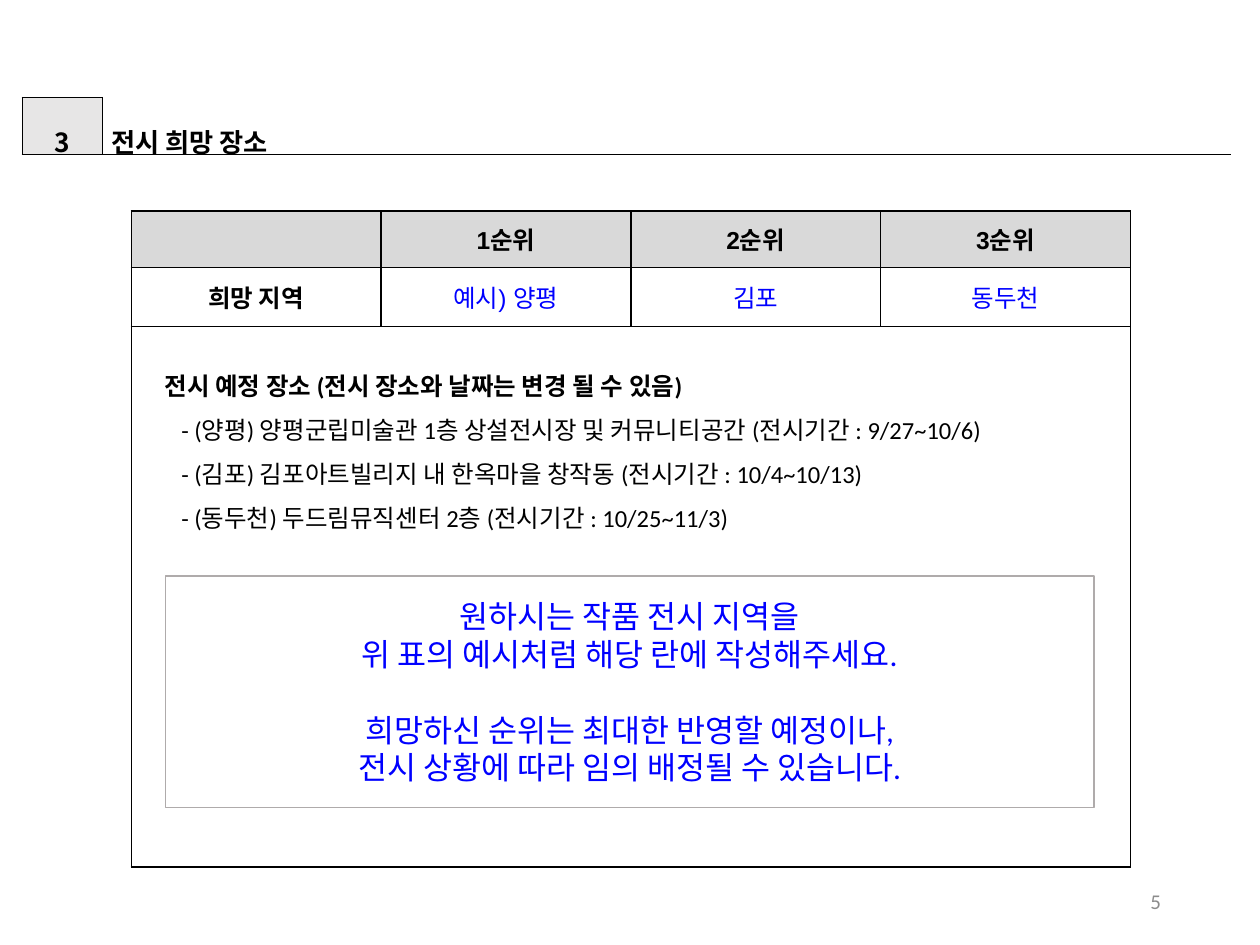
from dataclasses import dataclass

import pptx
import pptx.dml.color
import pptx.enum.shapes
import pptx.enum.text
import pptx.oxml
import pptx.oxml.ns
import pptx.util

Pt = pptx.util.Pt
RGB = pptx.dml.color.RGBColor.from_string
ALIGN = pptx.enum.text.PP_ALIGN
MIDDLE = pptx.enum.text.MSO_ANCHOR.MIDDLE
TOP = pptx.enum.text.MSO_ANCHOR.TOP


@dataclass(frozen=True)
class Theme:
    ink: str = "000000"
    example: str = "0000FF"
    page_number: str = "8C8C8C"
    head_fill: str = "D9D9D9"
    number_fill: str = "E7E6E6"
    paper: str = "FFFFFF"
    frame: str = "AFABAB"
    small: float = 12
    body: float = 14
    heading: float = 15
    notice: float = 18
    table_font: str = "Arial"
    text_font: str = "Calibri"
    korean_font: str = "Noto Sans CJK KR"


THEME = Theme()


def set_attributes(target, values):
    for name, value in values.items():
        setattr(target, name, value)


def write(para, words, size, font, color=THEME.ink, bold=False, **layout):
    set_attributes(para, layout)
    span = para.add_run()
    span.text = words
    set_attributes(span.font, {"size": Pt(size), "name": font, "bold": bold})
    span.font.color.rgb = RGB(color)
    east_asian = pptx.oxml.parse_xml(
        f'<a:ea {pptx.oxml.ns.nsdecls("a")} typeface="{THEME.korean_font}"/>')
    span.font._element.append(east_asian)


def paragraphs(frame, count):
    return [frame.paragraphs[0]] + [frame.add_paragraph() for _ in range(count - 1)]


def add_box(page, left, top, width, height, anchor):
    box = page.shapes.add_textbox(Pt(left), Pt(top), Pt(width), Pt(height))
    set_attributes(box.text_frame, {"word_wrap": True, "vertical_anchor": anchor})
    return box.text_frame


def add_table(page, left, top, widths, heights):
    table = page.shapes.add_table(len(heights), len(widths), Pt(left), Pt(top),
                                  Pt(sum(widths)), Pt(sum(heights))).table
    set_attributes(table, {"first_row": False, "horz_banding": False})
    for column, width in zip(table.columns, widths):
        column.width = Pt(width)
    for row, height in zip(table.rows, heights):
        row.height = Pt(height)
    return table


def style_cell(cell, line_width, fill=None, sides="LRTB"):
    properties = cell._tc.get_or_add_tcPr()
    for side in "LRTB":
        paint = (f'<a:solidFill><a:srgbClr val="{THEME.ink}"/></a:solidFill>'
                 if side in sides else "<a:noFill/>")
        properties.append(pptx.oxml.parse_xml(
            f'<a:ln{side} {pptx.oxml.ns.nsdecls("a")} w="{Pt(line_width)}">{paint}</a:ln{side}>'))
    if fill:
        cell.fill.solid()
        cell.fill.fore_color.rgb = RGB(fill)
    else:
        cell.fill.background()
    cell.vertical_anchor = MIDDLE


def add_section_heading(page, number, heading):
    table = add_table(page, 12.5, 55.5, [46, 645], [32.5])
    parts = [(number, ALIGN.CENTER, THEME.number_fill, "LRTB"),
             (heading, ALIGN.JUSTIFY, None, "LB")]
    for cell, (words, alignment, fill, sides) in zip(table.rows[0].cells, parts):
        style_cell(cell, 0.25, fill, sides)
        set_attributes(cell, {"margin_left": Pt(5), "margin_right": Pt(5),
                              "margin_top": Pt(1.4), "margin_bottom": Pt(1.4)})
        write(cell.text_frame.paragraphs[0], words, THEME.heading, THEME.korean_font,
              bold=True, alignment=alignment, line_spacing=1.6)


def add_preference_table(page, rows):
    table = add_table(page, 75, 120.5, [142.75] * 4, [32.4, 33.8, 308.8])
    table.cell(2, 0).merge(table.cell(2, 3))
    for index, row in enumerate(table.rows):
        for cell in row.cells:
            style_cell(cell, 1, THEME.head_fill if index == 0 else None)
    for row_index, row in enumerate(rows):
        for column_index, words in enumerate(row):
            if not words:
                continue
            label = row_index == 0 or column_index == 0
            write(table.cell(row_index, column_index).text_frame.paragraphs[0], words,
                  THEME.body, THEME.table_font, THEME.ink if label else THEME.example,
                  label, alignment=ALIGN.CENTER)


def add_venues(page, heading, venues):
    frame = add_box(page, 87, 200, 538, 109, TOP)
    first, *others = paragraphs(frame, len(venues) + 1)
    write(first, heading, THEME.body, THEME.text_font, bold=True, line_spacing=1.5)
    for para, venue in zip(others, venues):
        para._p.get_or_add_pPr().set("marL", str(Pt(9.5)))
        write(para, f"- {venue}", THEME.body, THEME.text_font, line_spacing=1.5)


def add_notice(page, groups):
    box = page.shapes.add_shape(pptx.enum.shapes.MSO_SHAPE.RECTANGLE,
                                Pt(94.5), Pt(329), Pt(530.5), Pt(132.5))
    box.shadow.inherit = False
    box.fill.solid()
    box.fill.fore_color.rgb = RGB(THEME.paper)
    box.line.color.rgb = RGB(THEME.frame)
    box.line.width = Pt(1)
    set_attributes(box.text_frame, {"word_wrap": True, "vertical_anchor": MIDDLE})
    lines = [(words, group > 0 and index == 0)
             for group, members in enumerate(groups)
             for index, words in enumerate(members)]
    for para, (words, gap) in zip(paragraphs(box.text_frame, len(lines)), lines):
        write(para, words, THEME.notice, THEME.text_font, THEME.example,
              alignment=ALIGN.CENTER, space_before=Pt(21.7 if gap else 0))


def add_page_number(page, number):
    frame = add_box(page, 508.5, 500.5, 162, 28.5, MIDDLE)
    write(frame.paragraphs[0], number, THEME.small, THEME.text_font, THEME.page_number,
          alignment=ALIGN.RIGHT)


def main():
    deck = pptx.Presentation()
    set_attributes(deck, {"slide_width": Pt(720), "slide_height": Pt(540)})
    # The heading sits in a ruled table, so the blank layout is used
    page = deck.slides.add_slide(deck.slide_layouts[6])

    # Ranking table, whose last row frames the details
    add_preference_table(page, [
        ["", "1순위", "2순위", "3순위"],
        ["희망 지역", "예시) 양평", "김포", "동두천"],
    ])
    add_page_number(page, "5")
    add_section_heading(page, "3", "전시 희망 장소")

    # Details inside the frame
    add_notice(page, [
        ["원하시는 작품 전시 지역을", "위 표의 예시처럼 해당 란에 작성해주세요."],
        ["희망하신 순위는 최대한 반영할 예정이나,", "전시 상황에 따라 임의 배정될 수 있습니다."],
    ])
    add_venues(page, "전시 예정 장소 (전시 장소와 날짜는 변경 될 수 있음)", [
        "(양평) 양평군립미술관 1층 상설전시장 및 커뮤니티공간 (전시기간 : 9/27~10/6)",
        "(김포) 김포아트빌리지 내 한옥마을 창작동 (전시기간 : 10/4~10/13)",
        "(동두천) 두드림뮤직센터 2층 (전시기간 : 10/25~11/3)",
    ])
    deck.save("out.pptx")


if __name__ == "__main__":
    main()
